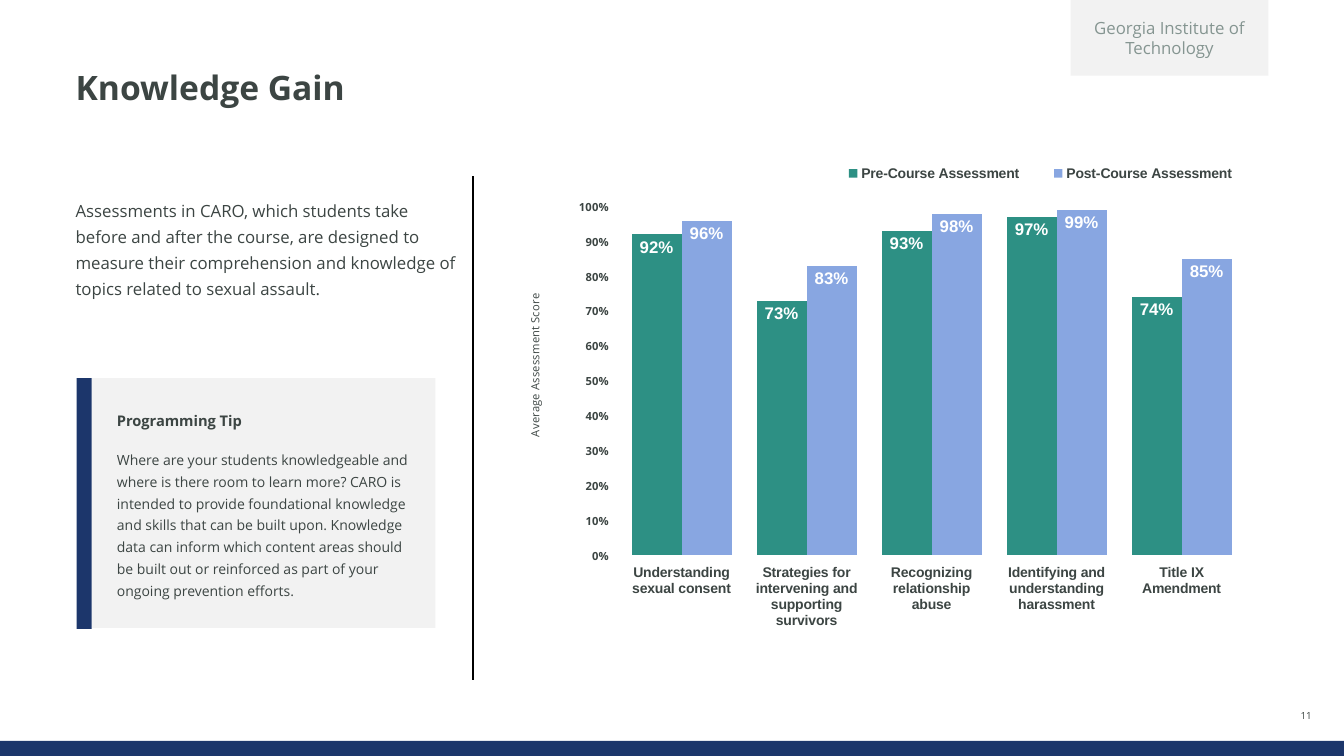
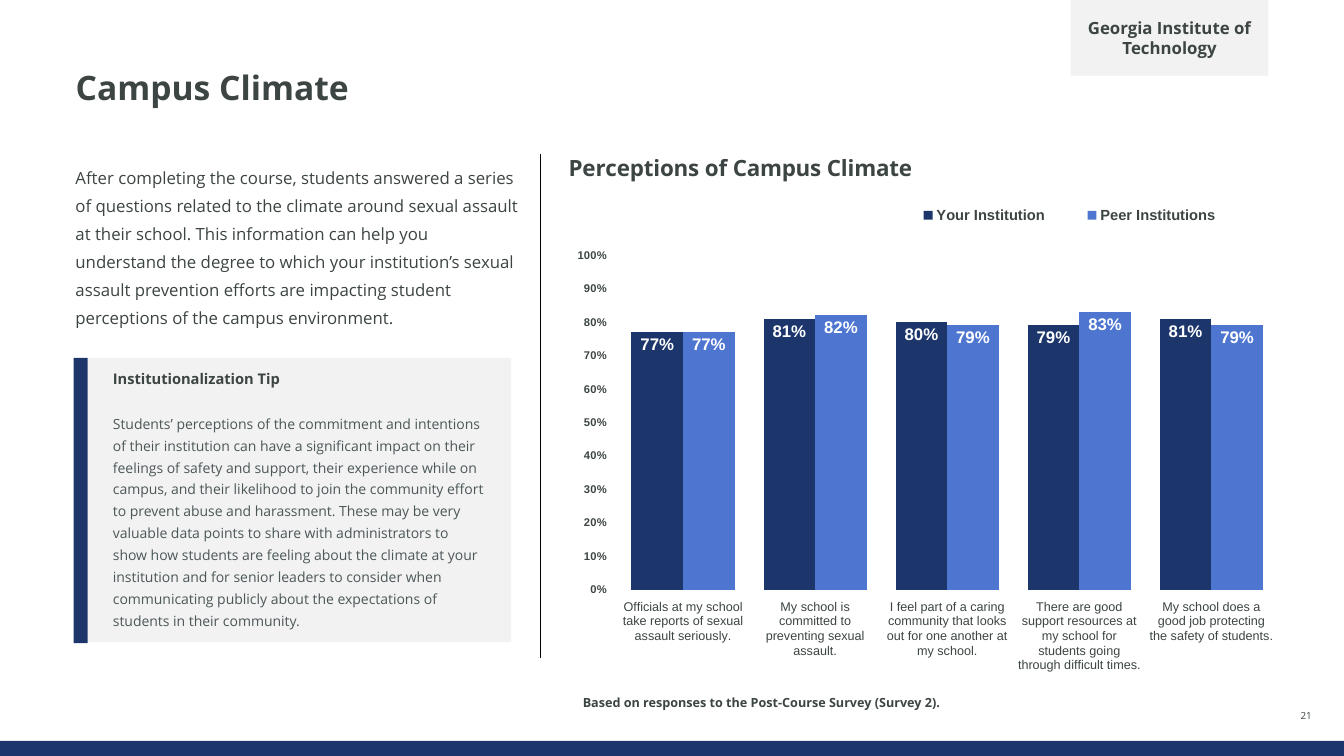
from dataclasses import dataclass
from typing import Optional

from lxml.etree import SubElement
from pptx import Presentation
from pptx.chart.data import CategoryChartData
from pptx.dml.color import RGBColor
from pptx.enum.chart import XL_CHART_TYPE, XL_LABEL_POSITION, XL_LEGEND_POSITION, XL_TICK_MARK
from pptx.enum.shapes import MSO_CONNECTOR, MSO_SHAPE
from pptx.enum.text import MSO_ANCHOR, MSO_AUTO_SIZE, PP_ALIGN
from pptx.oxml.ns import qn
from pptx.util import Inches, Pt

NAVY, PALE, BLACK, WHITE = "1C366B", "F2F2F2", "000000", "FFFFFF"
INK, MUTED, SLATE = "3C4543", "859591", "4C5758"
TEAL, SKY, BLUE = "2D9084", "88A6E1", "4E76D1"
SANS, ARIAL = "Open Sans", "Arial"
TITLE_ONLY = 5


@dataclass
class Para:
    """One paragraph; line is a multiple, or a Pt length for exact spacing."""
    text: str
    size: float
    bold: bool = False
    color: str = INK
    line: Optional[float] = None
    before: float = 0
    after: float = 0
    align: PP_ALIGN = PP_ALIGN.LEFT


def rgb(value):
    return RGBColor.from_string(value)


def set_font(font, size, color=INK, bold=False, name=SANS):
    font.name, font.size, font.bold = name, Pt(size), bold
    font.color.rgb = rgb(color)


def fill_text(tf, paras, anchor=MSO_ANCHOR.TOP, margins=(0, 0)):
    """Write paragraphs into a frame; margins are (sides, top and bottom)."""
    tf.word_wrap = True
    tf.auto_size = MSO_AUTO_SIZE.NONE
    tf.vertical_anchor = anchor
    tf.margin_left = tf.margin_right = Inches(margins[0])
    tf.margin_top = tf.margin_bottom = Inches(margins[1])
    for i, para in enumerate(paras):
        p = tf.add_paragraph() if i else tf.paragraphs[0]
        p.text = para.text
        p.alignment = para.align
        p.line_spacing = para.line
        p.space_before, p.space_after = Pt(para.before), Pt(para.after)
        for r in p.runs:
            set_font(r.font, para.size, para.color, para.bold)


def set_layout(parent, index, chart_box, place, inner=False):
    """Put a chart part at place (x, y and maybe w, h), in inches on the slide."""
    for old in parent.findall(qn("c:layout")):
        parent.remove(old)
    layout = SubElement(parent, qn("c:layout"))
    parent.insert(index, layout)
    manual = SubElement(layout, qn("c:manualLayout"))
    left, top, width, height = chart_box
    values = [("layoutTarget", "inner")] if inner else []
    values += [("xMode", "edge"), ("yMode", "edge")]
    values += [(tag, (length - start) / full) for tag, length, start, full
               in zip("xywh", place, (left, top, 0, 0), (width, height) * 2)]
    for tag, value in values:
        SubElement(manual, qn(f"c:{tag}")).set("val", str(value))


class Deck:
    def __init__(self):
        self.prs = Presentation()
        self.prs.slide_width, self.prs.slide_height = Inches(13.33), Inches(7.5)
        self.slide = None

    def new_slide(self, title, number, school_color, school_bold=False):
        self.slide = self.prs.slides.add_slide(self.prs.slide_layouts[TITLE_ONLY])
        self.rect((0, 7.35, 13.33, 0.15), NAVY)
        sp = self.slide.shapes.title
        sp.left, sp.top, sp.width, sp.height = map(Inches, (0.75, 0.71, 11.83, 0.7))
        fill_text(sp.text_frame, [Para(title, 24, True, line=0.9)])
        school = self.rect((10.62, 0, 1.96, 0.75), PALE)
        fill_text(school.text_frame,
                  [Para("Georgia Institute of Technology", 12, school_bold,
                        school_color, align=PP_ALIGN.CENTER)],
                  MSO_ANCHOR.MIDDLE, (0.1, 0))
        self.text((12.7, 7.01, 0.51, 0.15),
                  [Para(str(number), 7, align=PP_ALIGN.CENTER)], MSO_ANCHOR.BOTTOM)

    def rect(self, box, color):
        sp = self.slide.shapes.add_shape(MSO_SHAPE.RECTANGLE, *map(Inches, box))
        sp.shadow.inherit = False
        sp.fill.solid()
        sp.fill.fore_color.rgb = rgb(color)
        sp.line.fill.background()
        return sp

    def text(self, box, paras, anchor=MSO_ANCHOR.TOP, margins=(0, 0)):
        sp = self.slide.shapes.add_textbox(*map(Inches, box))
        fill_text(sp.text_frame, paras, anchor, margins)

    def divider(self, x, top):
        line = self.slide.shapes.add_connector(
            MSO_CONNECTOR.STRAIGHT, Inches(x), Inches(top), Inches(x), Inches(top + 5))
        line.line.color.rgb = rgb(BLACK)
        line.line.width = Pt(1)
        SubElement(line.element.spPr, qn("a:effectLst"))

    def tip(self, x, y, w, h, bar, paras):
        """A pale panel with a navy bar along its left edge."""
        panel = self.rect((x + bar, y, w - bar, h), PALE)
        fill_text(panel.text_frame, paras, MSO_ANCHOR.MIDDLE, (0.25, 0))
        self.rect((x, y, bar, h + 0.01), NAVY)

    def column_chart(self, box, cats, series, gap, plot, legend, legend_size,
                     cat_size, cat_bold, value_font):
        """Series are (name, values, colour); plot and legend are slide boxes."""
        data = CategoryChartData(number_format="0%")
        data.categories = cats
        for name, values, _ in series:
            data.add_series(name, values)
        chart = self.slide.shapes.add_chart(
            XL_CHART_TYPE.COLUMN_CLUSTERED, *map(Inches, box), data).chart
        set_font(chart.font, 10, name=ARIAL)
        chart.has_title = False

        bars = chart.plots[0]
        bars.gap_width, bars.overlap, bars.vary_by_categories = gap, 0, False
        for ser, (_, _, color) in zip(bars.series, series):
            ser.format.fill.solid()
            ser.format.fill.fore_color.rgb = rgb(color)
            labels = ser.data_labels
            labels.show_value = True
            labels.position = XL_LABEL_POSITION.INSIDE_END
            labels.number_format, labels.number_format_is_linked = "0%", False
            set_font(labels.font, 12, WHITE, True, ARIAL)

        for axis in (chart.category_axis, chart.value_axis):
            axis.has_major_gridlines = False
            axis.major_tick_mark = XL_TICK_MARK.OUTSIDE
            axis.format.line.fill.background()
        set_font(chart.category_axis.tick_labels.font, cat_size, bold=cat_bold, name=ARIAL)
        value_axis = chart.value_axis
        value_axis.minimum_scale, value_axis.maximum_scale = 0, 1
        value_axis.major_unit = 0.1
        ticks = value_axis.tick_labels
        ticks.number_format, ticks.number_format_is_linked = "0%", False
        set_font(ticks.font, 8, bold=True, name=value_font)

        chart.has_legend = True
        chart.legend.position = XL_LEGEND_POSITION.TOP
        chart.legend.include_in_layout = False
        set_font(chart.legend.font, legend_size, bold=True, name=ARIAL)
        root = chart.element
        set_layout(root.find(".//" + qn("c:legend")), 1, box, legend)
        set_layout(root.find(".//" + qn("c:plotArea")), 0, box, plot, inner=True)
        return chart

    def chart_heading(self, heading, text, size, bold, chart_box, place, upright=False):
        """Write a chart or axis title at a place on the slide."""
        tf = heading.text_frame
        tf.text = text
        set_font(tf.paragraphs[0].runs[0].font, size, bold=bold)
        title = heading.element
        if upright:
            body = title.find(".//" + qn("a:bodyPr"))
            body.set("rot", "-5400000")
            body.set("vert", "horz")
        set_layout(title, 1, chart_box, place)


def knowledge_gain(deck):
    deck.new_slide("Knowledge Gain", 11, MUTED)
    deck.text((0.75, 1.93, 3.83, 1.47), [Para(
        "Assessments in CARO, which students take before and after the course, are "
        "designed to measure their comprehension and knowledge of topics related to "
        "sexual assault.", 12, line=1.3)])
    deck.divider(4.69, 1.75)
    deck.tip(0.76, 3.75, 3.56, 2.48, 0.15, [
        Para("Programming Tip", 10.5, True, line=1.3),
        Para("Where are your students knowledgeable and where is there room to learn "
             "more? CARO is intended to provide foundational knowledge and skills that "
             "can be built upon. Knowledge data can inform which content areas should "
             "be built out or reinforced as part of your ongoing prevention efforts.",
             10, line=1.3, before=12)])
    box = (5.06, 1.58, 7.51, 4.8)
    chart = deck.column_chart(
        box,
        ["Understanding sexual consent",
         "Strategies for intervening and supporting survivors",
         "Recognizing relationship abuse",
         "Identifying and understanding harassment",
         "Title IX Amendment"],
        [("Pre-Course Assessment", (0.92, 0.73, 0.93, 0.97, 0.74), TEAL),
         ("Post-Course Assessment", (0.96, 0.83, 0.98, 0.99, 0.85), SKY)],
        gap=50, plot=(6.14, 2.05, 6.2, 3.46), legend=(8.12, 1.6, 4.4, 0.24),
        legend_size=10, cat_size=10, cat_bold=True, value_font=SANS)
    deck.chart_heading(chart.value_axis.axis_title, "Average Assessment Score",
                       8, False, box, (5.19, 2.89), upright=True)


def campus_climate(deck):
    deck.new_slide("Campus Climate", 21, INK, True)
    deck.text((5.78, 6.89, 6.01, 0.15), [Para(
        "Based on responses to the Post-Course Survey (Survey 2).", 9, True,
        line=Pt(12), after=2)], MSO_ANCHOR.BOTTOM)
    box = (5.59, 1.46, 7.23, 5.33)
    chart = deck.column_chart(
        box,
        ["Officials at my school take reports of sexual assault seriously.",
         "My school is committed to preventing sexual assault.",
         "I feel part of a caring community that looks out for one another at my school.",
         "There are good support resources at my school for students going through "
         "difficult times.",
         "My school does a good job protecting the safety of students."],
        [("Your Institution", (0.77, 0.81, 0.8, 0.79, 0.81), NAVY),
         ("Peer Institutions", (0.77, 0.82, 0.79, 0.83, 0.79), BLUE)],
        gap=56, plot=(6.12, 2.53, 6.55, 3.32), legend=(8.79, 2, 3.64, 0.27),
        legend_size=10.5, cat_size=9, cat_bold=False, value_font=ARIAL)
    deck.chart_heading(chart.chart_title, "Perceptions of Campus Climate",
                       16, True, box, (5.6, 1.46))
    deck.divider(5.36, 1.53)
    deck.text((0.65, 1.54, 4.61, 1.76), [Para(
        "After completing the course, students answered a series of questions related "
        "to the climate around sexual assault at their school. This information can "
        "help you understand the degree to which your institution’s sexual assault "
        "prevention efforts are impacting student perceptions of the campus "
        "environment.", 12, line=Pt(20), after=2)], margins=(0.1, 0.05))
    deck.tip(0.73, 3.55, 4.34, 2.82, 0.14, [
        Para("Institutionalization Tip", 10.5, True, line=Pt(12), after=2),
        Para("Students’ perceptions of the commitment and intentions of their "
             "institution can have a significant impact on their feelings of safety and "
             "support, their experience while on campus, and their likelihood to join "
             "the community effort to prevent abuse and harassment. These may be very "
             "valuable data points to share with administrators to show how students "
             "are feeling about the climate at your institution and for senior leaders "
             "to consider when communicating publicly about the expectations of "
             "students in their community.", 10, color=SLATE, line=1.3, before=14,
             after=2)])


def main():
    deck = Deck()
    knowledge_gain(deck)
    campus_climate(deck)
    deck.prs.save("out.pptx")


if __name__ == "__main__":
    main()
